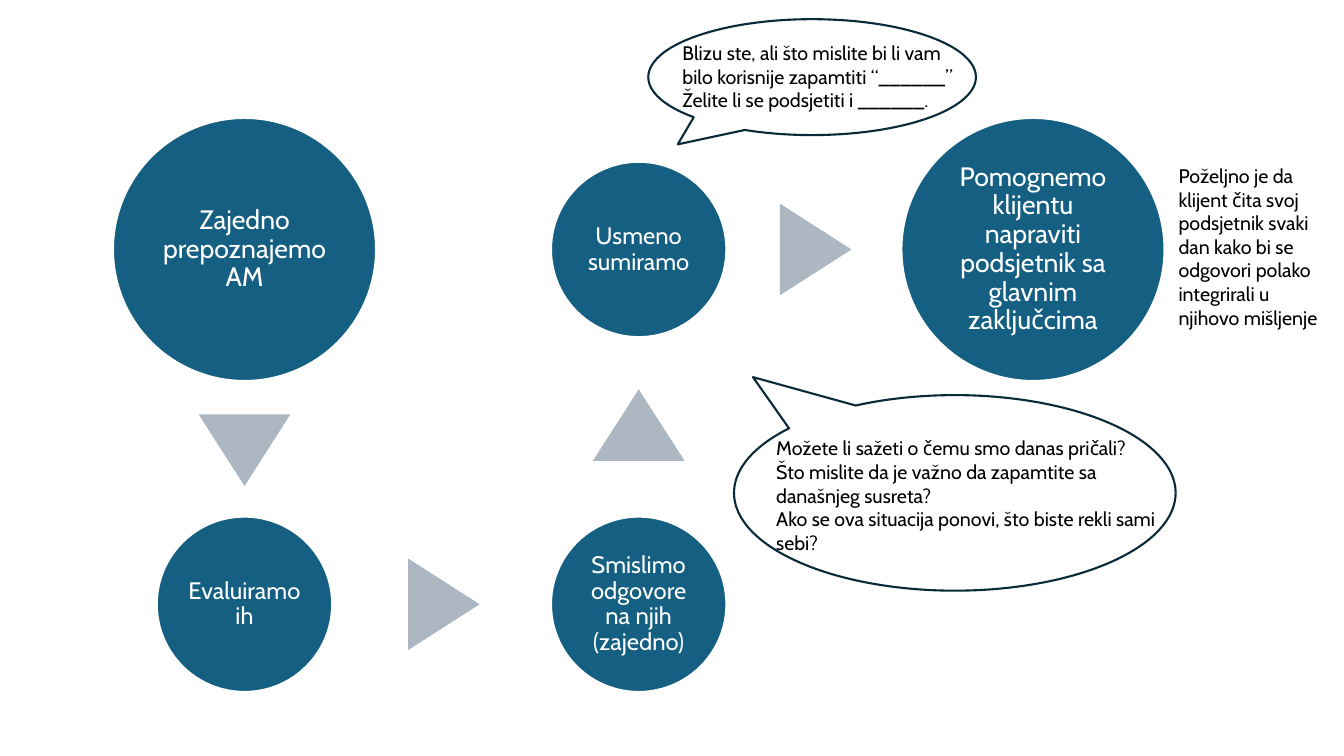
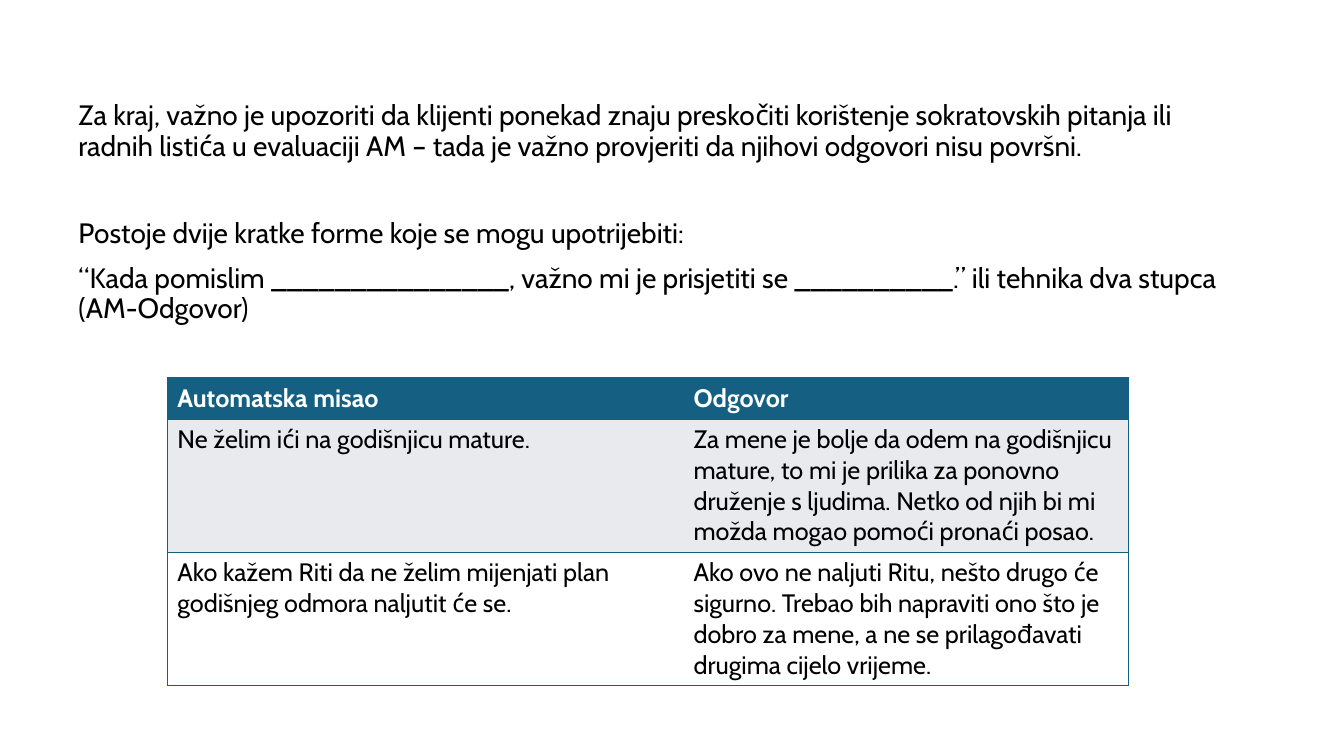
from math import atan2, degrees, hypot

from lxml.etree import SubElement
from pptx import Presentation
from pptx.dml.color import RGBColor
from pptx.enum.shapes import MSO_SHAPE
from pptx.enum.text import MSO_ANCHOR, PP_ALIGN
from pptx.oxml.ns import qn
from pptx.util import Emu, Pt

FONT = "Cabin"
TEAL, NAVY, GREY = "156082", "092A39", "ACB7C1"
PALE, WHITE, BLACK = "E8EAED", "FFFFFF", "000000"

LARGE, SMALL = (261, 19, 3), (174, 17, 2)
COL_PITCH, ROW_PITCH = 391, 352
ARROW_W, ARROW_H = 91, 71
STEPS = [
    (0, 0, LARGE, "Zajedno prepoznajemo AM"),
    (0, 1, SMALL, "Evaluiramo ih"),
    (1, 1, SMALL, "Smislimo odgovore na njih (zajedno)"),
    (1, 0, SMALL, "Usmeno sumiramo"),
    (2, 0, LARGE, "Pomognemo klijentu napraviti podsjetnik sa glavnim zaključcima"),
]
SUMMARY_QUESTIONS = [
    "Možete li sažeti o čemu smo danas pričali?",
    "Što mislite da je važno da zapamtite sa današnjeg susreta?",
    "Ako se ova situacija ponovi, što biste rekli sami sebi?",
]
REMINDER_QUESTIONS = [
    "Blizu ste, ali što mislite bi li vam bilo korisnije zapamtiti “______”",
    "Želite li se podsjetiti i ______.",
]
READING_NOTE = [
    "Poželjno je da klijent čita svoj podsjetnik svaki dan kako bi se odgovori "
    "polako integrirali u njihovo mišljenje",
]
CLOSING = [
    "Za kraj, važno je upozoriti da klijenti ponekad znaju preskočiti korištenje "
    "sokratovskih pitanja ili radnih listića u evaluaciji AM – tada je važno "
    "provjeriti da njihovi odgovori nisu površni.",
    "Postoje dvije kratke forme koje se mogu upotrijebiti:",
    "“Kada pomislim _______________, važno mi je prisjetiti se __________.” "
    "ili tehnika dva stupca (AM-Odgovor)",
]
THOUGHTS = [
    ("Automatska misao", "Odgovor"),
    ("Ne želim ići na godišnjicu mature.",
     "Za mene je bolje da odem na godišnjicu mature, to mi je prilika za ponovno "
     "druženje s ljudima. Netko od njih bi mi možda mogao pomoći pronaći posao."),
    ("Ako kažem Riti da ne želim mijenjati plan godišnjeg odmora naljutit će se.",
     "Ako ovo ne naljuti Ritu, nešto drugo će sigurno. Trebao bih napraviti ono "
     "što je dobro za mene, a ne se prilagođavati drugima cijelo vrijeme."),
]


def px(n):
    """Turn px (100 to the inch) into EMU."""
    return Emu(round(n * 9144))


def rgb(color):
    """Turn a hex string into a colour."""
    return RGBColor.from_string(color)


def write(tf, lines, size, color=BLACK, bold=False, align=PP_ALIGN.LEFT,
          spacing=None, gaps=()):
    """Write one paragraph per line, with gaps as the space before the later ones."""
    tf.word_wrap = True
    for i, line in enumerate(lines):
        p = tf.paragraphs[0] if i == 0 else tf.add_paragraph()
        p.alignment = align
        p.line_spacing = spacing
        if i and gaps:
            p.space_before = Pt(gaps[i - 1])
        r = p.add_run()
        r.text = line
        r.font.name, r.font.size, r.font.bold = FONT, Pt(size), bold
        r.font.color.rgb = rgb(color)


def shape(s, kind, box, fill=None, line=None):
    """Add a preset shape without shadow."""
    sp = s.shapes.add_shape(kind, *map(px, box))
    sp.shadow.inherit = False
    if fill:
        sp.fill.solid()
        sp.fill.fore_color.rgb = rgb(fill)
    else:
        sp.fill.background()
    if line:
        sp.line.color.rgb = rgb(line)
        sp.line.width = Pt(1.5)
    else:
        sp.line.fill.background()
    return sp


def text_box(s, box, lines, size=14, **style):
    """Add a wrapped text box."""
    write(s.shapes.add_textbox(*map(px, box)).text_frame, lines, size, **style)


def step(s, cx, cy, kind, text):
    """Add a round step centred on a point."""
    d, size, inset = kind
    sp = shape(s, MSO_SHAPE.OVAL, (cx - d / 2, cy - d / 2, d, d), TEAL, WHITE)
    tf = sp.text_frame
    tf.margin_left = tf.margin_right = tf.margin_top = tf.margin_bottom = px(inset)
    tf.vertical_anchor = MSO_ANCHOR.MIDDLE
    write(tf, [text], size, WHITE, align=PP_ALIGN.CENTER, spacing=0.9)


def arrow(s, start, end):
    """Point a triangle from one step to the next, in the gap between them."""
    (x1, y1, d1), (x2, y2, d2) = start, end
    dist = hypot(x2 - x1, y2 - y1)
    ux, uy = (x2 - x1) / dist, (y2 - y1) / dist
    along = d1 / 2 + 0.51 * (dist - (d1 + d2) / 2)
    box = (x1 + ux * along - ARROW_W / 2, y1 + uy * along - ARROW_H / 2,
           ARROW_W, ARROW_H)
    sp = shape(s, MSO_SHAPE.ISOSCELES_TRIANGLE, box, GREY)
    sp.rotation = degrees(atan2(ux, -uy))


def flow(s, x, y):
    """Place the steps on a grid and join them with arrows."""
    half = LARGE[0] / 2
    last = None
    for col, row, kind, text in STEPS:
        here = (x + half + col * COL_PITCH, y + half + row * ROW_PITCH, kind[0])
        if last:
            arrow(s, last, here)
        step(s, here[0], here[1], kind, text)
        last = here


def callout(s, box, tip, inner, lines):
    """Add a speech bubble with text in an inner box relative to it."""
    sp = shape(s, MSO_SHAPE.OVAL_CALLOUT, box, line=NAVY)
    sp.adjustments[0], sp.adjustments[1] = tip
    dx, dy, w, h = inner
    text_box(s, (box[0] + dx, box[1] + dy, w, h), lines)


def edges(cell, sides):
    """Draw the named cell edges and clear the others."""
    tc_pr = cell._tc.get_or_add_tcPr()
    for i, side in enumerate("LRTB"):
        ln = SubElement(tc_pr, qn("a:ln" + side), w=str(Pt(1)))
        if side in sides:
            fill = SubElement(ln, qn("a:solidFill"))
            SubElement(fill, qn("a:srgbClr"), val=TEAL)
        else:
            SubElement(ln, qn("a:noFill"))
        tc_pr.insert(i, ln)


def thought_table(s, x, y, widths, heights):
    """Add the two-column table of thoughts and answers."""
    box = (x, y, sum(widths), sum(heights))
    table = s.shapes.add_table(len(heights), len(widths), *map(px, box)).table
    table.first_row = table.horz_banding = False
    for col, w in zip(table.columns, widths):
        col.width = px(w)
    for row, h in zip(table.rows, heights):
        row.height = px(h)
    for i, (texts, fill) in enumerate(zip(THOUGHTS, (TEAL, PALE, WHITE))):
        for j, text in enumerate(texts):
            cell = table.cell(i, j)
            cell.fill.solid()
            cell.fill.fore_color.rgb = rgb(fill)
            edges(cell, "LR"[j] + "TB")
            write(cell.text_frame, [text], 18, BLACK if i else WHITE, bold=i == 0)


def flow_slide(prs):
    """Build the slide with the steps and the speech bubbles."""
    s = prs.slides.add_slide(prs.slide_layouts[6])
    flow(s, 112, 117)
    callout(s, (728, 392, 438, 194), (-0.457, -0.592), (32, 36, 397, 128),
            SUMMARY_QUESTIONS)
    callout(s, (643, 19, 325, 115), (-0.41, 0.58), (24, 17, 302, 111),
            REMINDER_QUESTIONS)
    text_box(s, (1159, 158, 165, 175), READING_NOTE)


def closing_slide(prs):
    """Build the slide with the closing advice and the table."""
    s = prs.slides.add_slide(prs.slide_layouts[6])
    text_box(s, (68, 96, 1150, 362), CLOSING, 20, spacing=0.9, gaps=(41, 10))
    thought_table(s, 166, 375, (512, 441), (41, 132, 132))


def main():
    """Build and save the presentation."""
    prs = Presentation()
    prs.slide_width, prs.slide_height = px(1333), px(750)
    flow_slide(prs)
    closing_slide(prs)
    prs.save("out.pptx")


if __name__ == "__main__":
    main()
